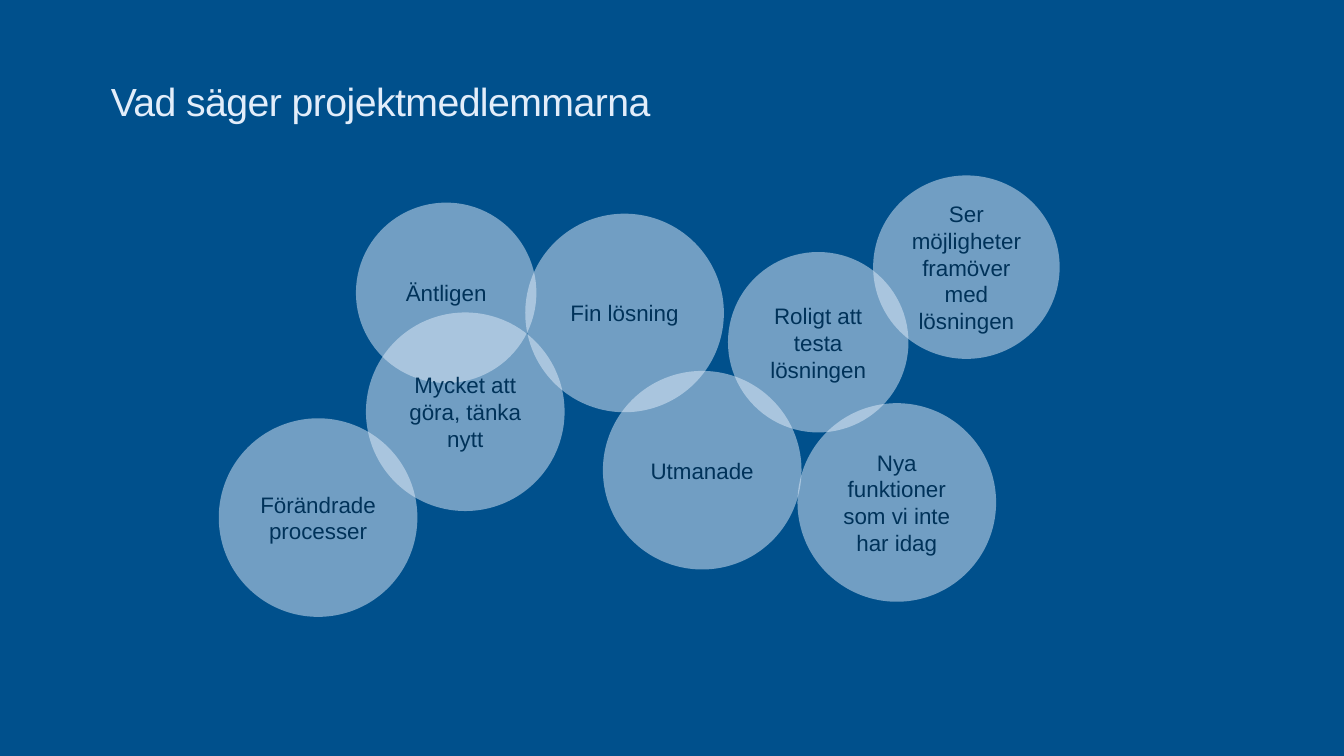
from lxml import etree
from pptx import Presentation
from pptx.dml.color import RGBColor
from pptx.enum.shapes import MSO_SHAPE
from pptx.enum.text import MSO_ANCHOR, PP_ALIGN
from pptx.oxml.ns import qn
from pptx.util import Inches, Pt

ELLIPSE = MSO_SHAPE.OVAL
TOP, MIDDLE = MSO_ANCHOR.TOP, MSO_ANCHOR.MIDDLE
LEFT, CENTER = PP_ALIGN.LEFT, PP_ALIGN.CENTER

BACKGROUND = "00508C"
PALE_BLUE = "E2EDFA"
DARK_BLUE = "003259"
FONT = "Arial"

SMALL, LARGE = (1.79, 1.79), (1.97, 1.97)
OPINIONS = [
    ("Äntligen", 3.53, 2.01, SMALL),
    ("Roligt att testa lösningen", 7.22, 2.5, SMALL),
    ("Utmanade", 5.98, 3.68, LARGE),
    ("Fin lösning", 5.21, 2.12, LARGE),
    ("Mycket att göra, tänka nytt", 3.63, 3.1, LARGE),
    ("Nya funktioner som vi inte har idag", 7.91, 4, LARGE),
    ("Ser möjligheter framöver med lösningen", 8.66, 1.74, (1.85, 1.82)),
    ("Förändrade processer", 2.17, 4.15, LARGE),
]


def rgb(hex_colour):
    return RGBColor.from_string(hex_colour)


def write(shape, text, size, colour, align, anchor):
    frame = shape.text_frame
    frame.word_wrap = True
    frame.vertical_anchor = anchor
    paragraph = frame.paragraphs[0]
    paragraph.alignment = align
    run = paragraph.add_run()
    run.text = text
    run.font.name = FONT
    run.font.size = Pt(size)
    run.font.color.rgb = rgb(colour)
    return paragraph


def add_title(slide, text):
    title = slide.shapes.add_textbox(Inches(1), Inches(0.77), Inches(10.21), Inches(0.76))
    paragraph = write(title, text, 28, PALE_BLUE, LEFT, TOP)
    paragraph.line_spacing = 0.9
    paragraph.runs[0].font._element.set("spc", "-40")


def add_bubble(slide, text, left, top, size):
    width, height = size
    bubble = slide.shapes.add_shape(
        ELLIPSE, Inches(left), Inches(top), Inches(width), Inches(height)
    )
    bubble.shadow.inherit = False
    bubble.line.fill.background()
    bubble.fill.solid()
    bubble.fill.fore_color.rgb = rgb(PALE_BLUE)
    fill_colour = bubble._element.spPr.find(qn("a:solidFill")).find(qn("a:srgbClr"))
    etree.SubElement(fill_colour, qn("a:alpha"), val="50000")
    write(bubble, text, 16, DARK_BLUE, CENTER, MIDDLE)


def main():
    presentation = Presentation()
    presentation.slide_width = Inches(13.33)
    presentation.slide_height = Inches(7.5)
    slide = presentation.slides.add_slide(presentation.slide_layouts[6])
    slide.background.fill.solid()
    slide.background.fill.fore_color.rgb = rgb(BACKGROUND)
    add_title(slide, "Vad säger projektmedlemmarna")
    for text, left, top, size in OPINIONS:
        add_bubble(slide, text, left, top, size)
    presentation.save("out.pptx")


if __name__ == "__main__":
    main()
